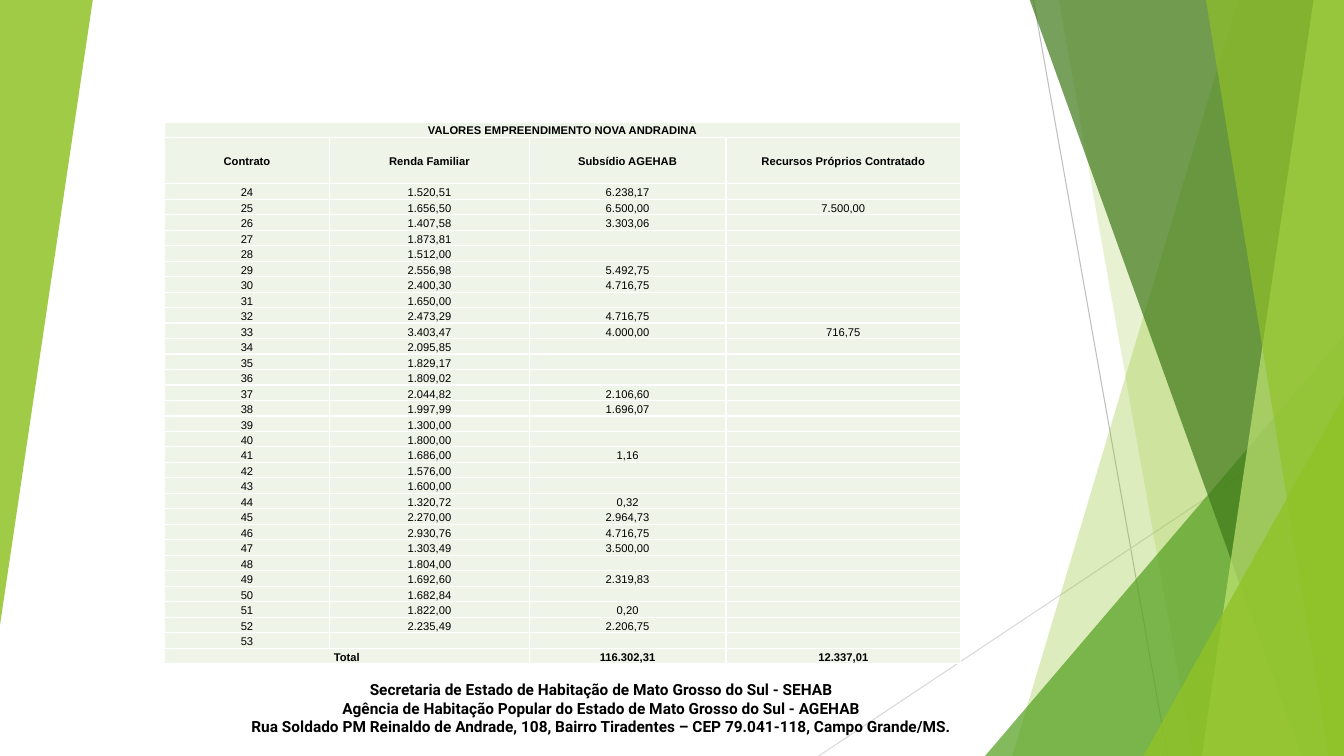
from typing import NamedTuple

from lxml.etree import SubElement
from pptx import Presentation
from pptx.dml.color import RGBColor
from pptx.dml.fill import FillFormat
from pptx.enum.shapes import MSO_CONNECTOR, MSO_SHAPE
from pptx.enum.text import MSO_ANCHOR, PP_ALIGN
from pptx.oxml.ns import qn
from pptx.shapes.autoshape import Shape
from pptx.slide import Slide
from pptx.table import _Cell
from pptx.text.text import Font
from pptx.util import Pt

PX = 9144
WIDTH, HEIGHT = 1333, 750
CELL_FILL = "EEF4E8"


class Ray(NamedTuple):
    start: tuple[int, int]
    end: tuple[int, int]
    color: str


class Band(NamedTuple):
    top: int
    bottom: int
    color: str
    alpha: int


class Wedge(NamedTuple):
    box: tuple[int, int, int, int]
    color: str
    alpha: int
    rotation: int = 0


class Contract(NamedTuple):
    income: str = ""
    subsidy: str = ""
    own: str = ""


RAYS = [
    Ray((1025, 0), (1158, 750), "BFBFBF"),
    Ray((1333, 403), (812, 750), "D9D9D9"),
]
DECOR = [
    Band(1228, 1004, "90C226", 30),
    Band(1050, 1183, "90C226", 20),
    Wedge((977, 333, 356, 417), "54A021", 72),
    Band(1021, 1291, "3F7819", 70),
    Band(1303, 1192, "C0E474", 70),
    Band(1196, 1318, "90C226", 65),
    Wedge((1134, 393, 199, 357), "90C226", 80),
    Wedge((0, 0, 92, 620), "90C226", 85, 180),
]
FOOTER = [
    "Secretaria de Estado de Habitação de Mato Grosso do Sul - SEHAB",
    "Agência de Habitação Popular do Estado de Mato Grosso do Sul - AGEHAB",
    "Rua Soldado PM Reinaldo de Andrade, 108, Bairro Tiradentes – CEP 79.041-118, Campo Grande/MS.",
]
TITLE = "VALORES EMPREENDIMENTO NOVA ANDRADINA"
HEADERS = ["Contrato", "Renda Familiar", "Subsídio AGEHAB", "Recursos Próprios Contratado"]
TOTALS = ["Total", "", "116.302,31", "12.337,01"]
FIRST_CONTRACT = 24
CONTRACTS = [
    Contract("1.520,51", "6.238,17"),
    Contract("1.656,50", "6.500,00", "7.500,00"),
    Contract("1.407,58", "3.303,06"),
    Contract("1.873,81"),
    Contract("1.512,00"),
    Contract("2.556,98", "5.492,75"),
    Contract("2.400,30", "4.716,75"),
    Contract("1.650,00"),
    Contract("2.473,29", "4.716,75"),
    Contract("3.403,47", "4.000,00", "716,75"),
    Contract("2.095,85"),
    Contract("1.829,17"),
    Contract("1.809,02"),
    Contract("2.044,82", "2.106,60"),
    Contract("1.997,99", "1.696,07"),
    Contract("1.300,00"),
    Contract("1.800,00"),
    Contract("1.686,00", "1,16"),
    Contract("1.576,00"),
    Contract("1.600,00"),
    Contract("1.320,72", "0,32"),
    Contract("2.270,00", "2.964,73"),
    Contract("2.930,76", "4.716,75"),
    Contract("1.303,49", "3.500,00"),
    Contract("1.804,00"),
    Contract("1.692,60", "2.319,83"),
    Contract("1.682,84"),
    Contract("1.822,00", "0,20"),
    Contract("2.235,49", "2.206,75"),
    Contract(),
]
COLUMNS = [164, 198, 195, 233]
TABLE_LEFT, TABLE_TOP, TABLE_HEIGHT, HEADER_HEIGHT = 163, 121, 538, 46


def px(*values: int) -> list[int]:
    return [value * PX for value in values]


def paint(fill: FillFormat, color: str) -> None:
    fill.solid()
    fill.fore_color.rgb = RGBColor.from_string(color)


def style(font: Font, name: str, size: int, bold: bool) -> None:
    for key, value in {"name": name, "size": Pt(size), "bold": bold}.items():
        setattr(font, key, value)
    paint(font.fill, "000000")


def finish(sp: Shape, color: str, alpha: int) -> None:
    sp.shadow.inherit = False
    sp.line.fill.background()
    paint(sp.fill, color)
    rgb = sp.fill._xPr.find(f"{qn('a:solidFill')}/{qn('a:srgbClr')}")
    SubElement(rgb, qn("a:alpha"), val=str(alpha * 1000))


def draw_ray(s: Slide, ray: Ray) -> None:
    line = s.shapes.add_connector(MSO_CONNECTOR.STRAIGHT, *px(*ray.start, *ray.end))
    line.line.width = Pt(0.75)
    paint(line.line.fill, ray.color)
    SubElement(line._element.spPr, qn("a:effectLst"))


def draw_band(s: Slide, band: Band) -> None:
    outline = s.shapes.build_freeform(band.top, -1, scale=PX)
    outline.add_line_segments([(WIDTH, -1), (WIDTH, HEIGHT), (band.bottom, HEIGHT)])
    finish(outline.convert_to_shape(), band.color, band.alpha)


def draw_wedge(s: Slide, wedge: Wedge) -> None:
    sp = s.shapes.add_shape(MSO_SHAPE.ISOSCELES_TRIANGLE, *px(*wedge.box))
    sp.adjustments[0] = 1
    sp.rotation = wedge.rotation
    finish(sp, wedge.color, wedge.alpha)


def draw_footer(s: Slide) -> None:
    tf = s.shapes.add_textbox(*px(176, 648, 841, 87)).text_frame
    tf.word_wrap = True
    tf.margin_top = 27 * PX
    for i, text in enumerate(FOOTER):
        p = tf.add_paragraph() if i else tf.paragraphs[0]
        p.alignment = PP_ALIGN.CENTER
        r = p.add_run()
        r.text = text
        style(r.font, "Roboto", 11, True)


def fill_cell(cell: _Cell, text: str, bold: bool, anchor: MSO_ANCHOR) -> None:
    layout = {"margin_left": PX, "margin_right": PX, "margin_top": PX,
              "margin_bottom": 0, "vertical_anchor": anchor}
    for key, value in layout.items():
        setattr(cell, key, value)
    p = cell.text_frame.paragraphs[0]
    p.alignment = PP_ALIGN.CENTER
    if text:
        r = p.add_run()
        r.text = text
        style(r.font, "Arial", 8, bold)
    else:
        SubElement(p._p, qn("a:endParaRPr"), sz="800")
    tc_pr = cell._tc.get_or_add_tcPr()
    for side in "LRTB":
        border = SubElement(tc_pr, qn(f"a:ln{side}"), w=str(Pt(1)))
        fill = SubElement(border, qn("a:solidFill"))
        SubElement(fill, qn("a:srgbClr"), val="FFFFFF")
    paint(cell.fill, CELL_FILL)


def draw_table(s: Slide) -> None:
    body = [[str(n), *contract] for n, contract in enumerate(CONTRACTS, FIRST_CONTRACT)]
    rows = [[TITLE, "", "", ""], HEADERS, *body, TOTALS]
    last = len(rows) - 1
    box = px(TABLE_LEFT, TABLE_TOP, sum(COLUMNS), TABLE_HEIGHT)
    table = s.shapes.add_table(len(rows), len(COLUMNS), *box).table
    table.first_row = table.horz_banding = False
    for column, width in zip(table.columns, COLUMNS):
        column.width = width * PX
    for i, texts in enumerate(rows):
        table.rows[i].height = HEADER_HEIGHT * PX if i == 1 else (TABLE_HEIGHT - HEADER_HEIGHT) * PX // last
        anchor = MSO_ANCHOR.MIDDLE if i < 2 else MSO_ANCHOR.BOTTOM
        for j, text in enumerate(texts):
            fill_cell(table.cell(i, j), text, i < 2 or i == last, anchor)
    table.cell(0, 0).merge(table.cell(0, 3))
    table.cell(last, 0).merge(table.cell(last, 1))


def main() -> None:
    prs = Presentation()
    prs.slide_width, prs.slide_height = px(WIDTH, HEIGHT)
    s = prs.slides.add_slide(prs.slide_layouts[6])
    for ray in RAYS:
        draw_ray(s, ray)
    for part in DECOR:
        if isinstance(part, Band):
            draw_band(s, part)
        else:
            draw_wedge(s, part)
    draw_footer(s)
    draw_table(s)
    prs.save("out.pptx")


if __name__ == "__main__":
    main()
